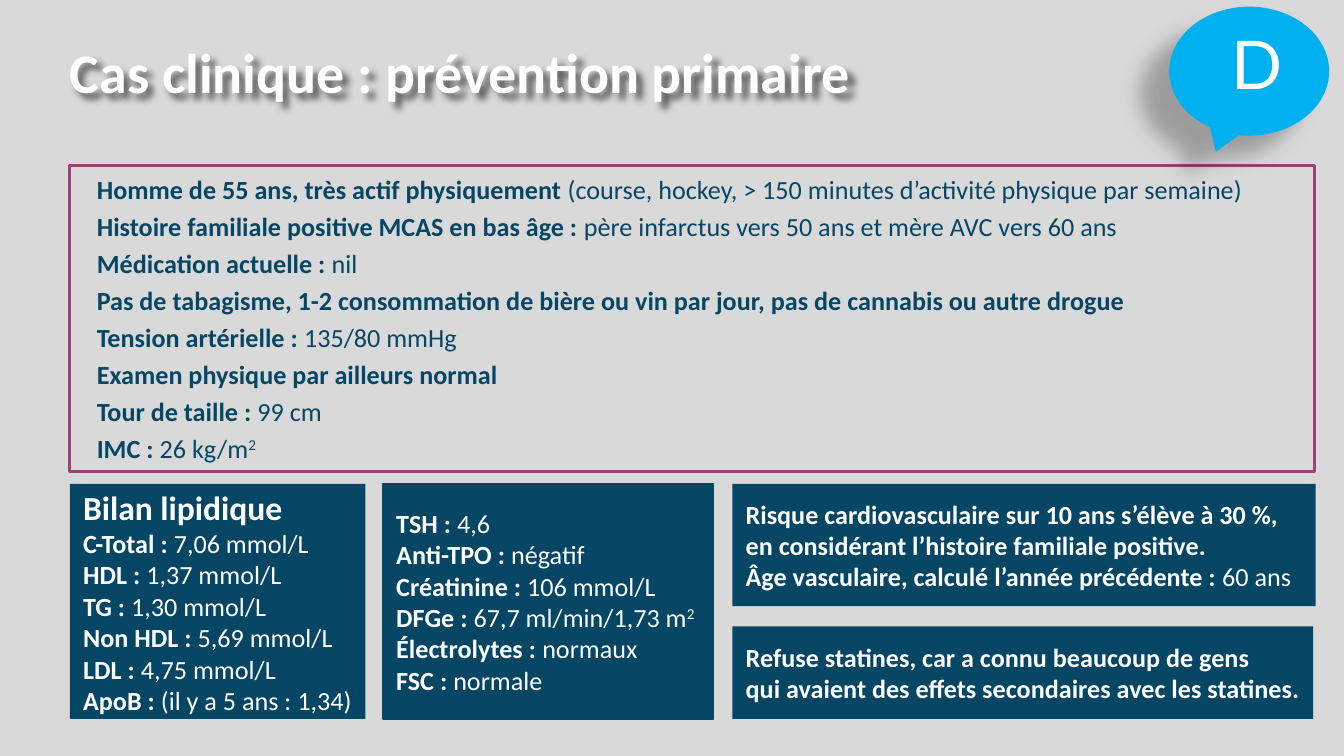
"""Build the clinical case slide on primary prevention."""
import pptx
import pptx.dml.color
import pptx.enum.shapes
import pptx.enum.text
import pptx.oxml
import pptx.oxml.ns
import pptx.util
from pptx.util import Inches

RGBColor = pptx.dml.color.RGBColor
GREY = RGBColor(0xD9, 0xD9, 0xD9)
NAVY = RGBColor(0x06, 0x46, 0x65)
PLUM = RGBColor(0x99, 0x43, 0x71)
SKY = RGBColor(0x00, 0xB0, 0xF0)
WHITE = RGBColor(0xFF, 0xFF, 0xFF)

SHAPE = pptx.enum.shapes.MSO_SHAPE
ALIGN = pptx.enum.text.PP_ALIGN
MIDDLE = pptx.enum.text.MSO_ANCHOR.MIDDLE
FIXED = pptx.enum.text.MSO_AUTO_SIZE.NONE

LEFT = 0.52
ROW = 3.6

HISTORY = [
    ("Homme de 55 ans, très actif physiquement ",
     "(course, hockey, > 150 minutes d’activité physique par semaine)"),
    ("Histoire familiale positive MCAS en bas âge : ",
     "père infarctus vers 50 ans et mère AVC vers 60 ans"),
    ("Médication actuelle : ", "nil"),
    ("Pas de tabagisme, 1-2 consommation de bière ou vin par jour, "
     "pas de cannabis ou autre drogue",),
    ("Tension artérielle : ", "135/80 mmHg"),
    ("Examen physique par ailleurs normal",),
    ("Tour de taille : ", "99 cm"),
    ("IMC : ", "26 kg/m", "2"),
]
LIPIDS = [
    ("Bilan lipidique",),
    ("C-Total : ", "7,06 mmol/L"),
    ("HDL : ", "1,37 mmol/L"),
    ("TG : ", "1,30 mmol/L"),
    ("Non HDL : ", "5,69 mmol/L"),
    ("LDL : ", "4,75 mmol/L"),
    ("ApoB : ", "(il y a 5 ans : 1,34)"),
]
LABS = [
    ("TSH : ", "4,6"),
    ("Anti-TPO : ", "négatif"),
    ("Créatinine : ", "106 mmol/L"),
    ("DFGe : ", "67,7 ml/min/1,73 m", "2"),
    ("Électrolytes : ", "normaux"),
    ("FSC : ", "normale"),
]
RISK = [
    ("Risque cardiovasculaire sur 10 ans s’élève à 30 %,",),
    ("en considérant l’histoire familiale positive.",),
    ("Âge vasculaire, calculé l’année précédente : ", "60 ans"),
]
REFUSAL = [
    ("Refuse statines, car a connu beaucoup de gens",),
    ("qui avaient des effets secondaires avec les statines.",),
]


def place(shape, left, top, width, height):
    """Move and size a shape, in inches."""
    shape.left, shape.top = Inches(left), Inches(top)
    shape.width, shape.height = Inches(width), Inches(height)


def inset(frame, left, top, right, bottom, wrap=True):
    """Set the margins of a text frame, in inches, and centre it vertically."""
    frame.margin_left, frame.margin_right = Inches(left), Inches(right)
    frame.margin_top, frame.margin_bottom = Inches(top), Inches(bottom)
    frame.vertical_anchor = MIDDLE
    frame.auto_size = FIXED
    frame.word_wrap = wrap


def add_run(para, text, size, color, bold=False, face="Calibri"):
    """Add one formatted run and return it."""
    run = para.add_run()
    run.text = text
    font = run.font
    font.size, font.bold, font.name = pptx.util.Pt(size), bold, face
    font.color.rgb = color
    return run


def shade(shape, blur, dist, angle, alpha):
    """Give a shape an outer shadow."""
    shape.shadow.inherit = False
    effect = shape._element.spPr.find(pptx.oxml.ns.qn("a:effectLst"))
    space = pptx.oxml.ns.nsdecls("a")
    effect.append(pptx.oxml.parse_xml(
        f'<a:outerShdw {space} blurRad="{pptx.util.Pt(blur)}" '
        f'dist="{pptx.util.Pt(dist)}" dir="{angle * 60000}" algn="tl" rotWithShape="0">'
        f'<a:srgbClr val="000000"><a:alpha val="{alpha * 1000}"/></a:srgbClr>'
        '</a:outerShdw>'))


def add_lines(frame, lines, color, gap=0, head=14):
    """Write lines made of a bold part, a plain part and a superscript."""
    for index, parts in enumerate(lines):
        para = frame.paragraphs[0] if index == 0 else frame.add_paragraph()
        para.alignment = ALIGN.LEFT
        para.line_spacing = 1.0
        para.space_before = pptx.util.Pt(gap if index else 0)
        for rank, text in enumerate(parts):
            size = 14 if index else head
            run = add_run(para, text, size, color, rank == 0)
            if rank == 2:
                run.font._element.set("baseline", "30000")


def add_title(slide):
    """Fill the title placeholder with shadowed text."""
    title = slide.shapes.title
    place(title, LEFT, 0.27, 7.74, 0.61)
    title.fill.background()
    shade(title, 4, 4, 45, 60)
    inset(title.text_frame, 0, 0.05, 0, 0.05)
    para = title.text_frame.paragraphs[0]
    para.alignment = ALIGN.LEFT
    para.line_spacing = 0.8
    add_run(para, "Cas clinique : prévention primaire", 30, WHITE, True)


def add_history(slide):
    """Fill the body placeholder with the framed patient history."""
    body = slide.placeholders[1]
    place(body, LEFT, 1.23, 9.26, 2.28)
    body.line.color.rgb = PLUM
    body.line.width = pptx.util.Pt(1.5)
    inset(body.text_frame, 0.2, 0.05, 0.1, 0.05)
    add_lines(body.text_frame, HISTORY, NAVY, gap=3)
    for para in body.text_frame.paragraphs:
        props = para._p.get_or_add_pPr()
        props.set("marL", "0")
        props.set("indent", "0")
        props.append(pptx.oxml.parse_xml(
            f'<a:buNone {pptx.oxml.ns.nsdecls("a")}/>'))


def add_form(slide, kind, box, color):
    """Add a filled shape without outline or shadow."""
    shape = slide.shapes.add_shape(kind, *map(Inches, box))
    shape.shadow.inherit = False
    shape.fill.solid()
    shape.fill.fore_color.rgb = color
    shape.line.fill.background()
    return shape


def add_card(slide, box, lines, wrap=False, head=14):
    """Add a navy card with white lines."""
    card = add_form(slide, SHAPE.RECTANGLE, box, NAVY)
    inset(card.text_frame, 0.1, 0.1, 0.1, 0.1, wrap)
    add_lines(card.text_frame, lines, WHITE, head=head)
    return card


def add_badge(slide):
    """Add the speech bubble and its letter."""
    bubble = add_form(slide, SHAPE.OVAL_CALLOUT, (8.7, 0.05, 1.19, 0.96), SKY)
    shade(bubble, 11.8, 19.7, 141, 28)
    label = slide.shapes.add_textbox(*map(Inches, (8.8, 0.12, 1.1, 0.71)))
    label.text_frame.word_wrap = True
    para = label.text_frame.paragraphs[0]
    para.alignment = ALIGN.CENTER
    add_run(para, "D", 36, WHITE, face="Lato")


def main():
    """Build and save the slide."""
    deck = pptx.Presentation()
    deck.slide_width = Inches(10)
    deck.slide_height = deck.slide_width * 9 // 16
    slide = deck.slides.add_slide(deck.slide_layouts[1])
    slide.background.fill.solid()
    slide.background.fill.fore_color.rgb = GREY
    add_title(slide)
    add_history(slide)
    add_card(slide, (LEFT, ROW, 2.2, 1.75), LIPIDS, head=18)
    labs = add_card(slide, (2.85, ROW, 2.46, 1.75), LABS, wrap=True)
    labs.line.color.rgb = NAVY
    labs.line.width = pptx.util.Pt(0.75)
    add_card(slide, (5.45, ROW, 4.34, 0.91), RISK)
    add_card(slide, (5.45, 4.66, 4.32, 0.69), REFUSAL)
    add_badge(slide)
    deck.save("out.pptx")


if __name__ == "__main__":
    main()
